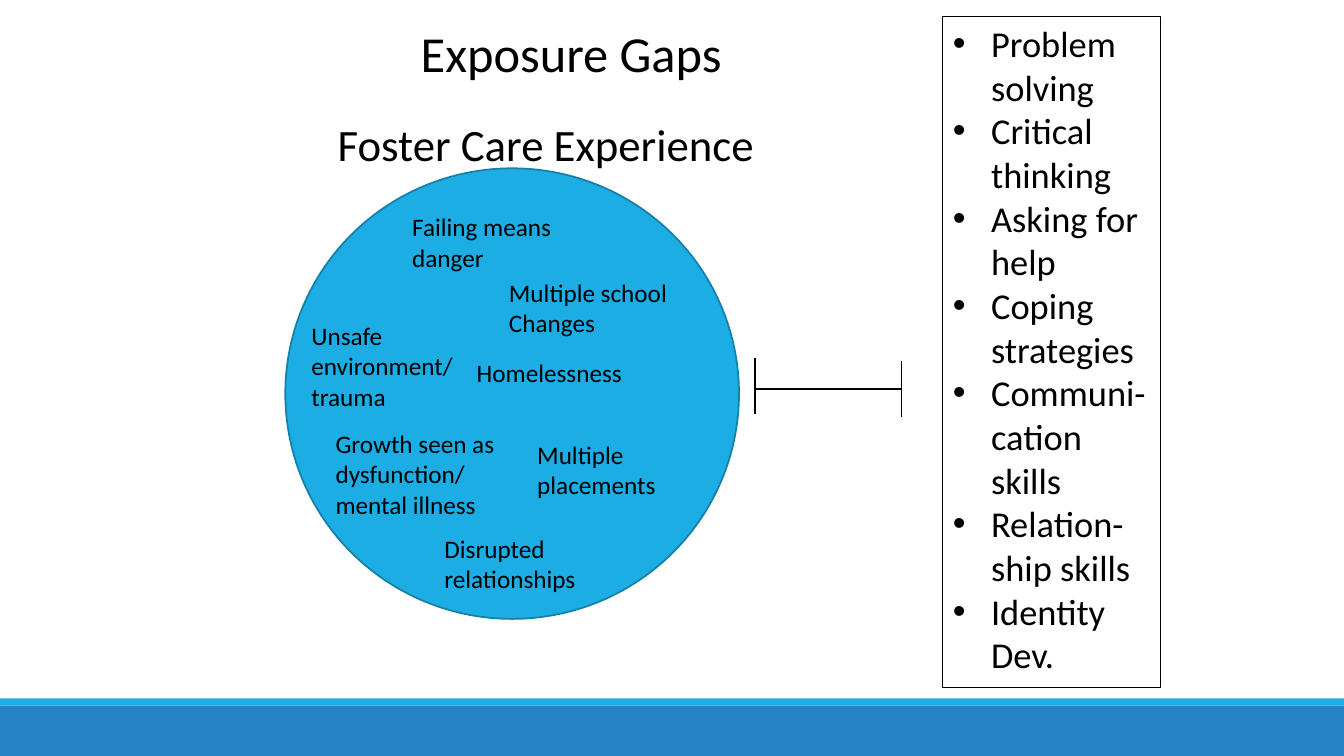
from pptx import Presentation
from pptx import util as u
from pptx.dml.color import RGBColor
from pptx.enum import shapes, text
from pptx.oxml.ns import qn
from lxml import etree

COLORS = {"black": "000000", "sky": "1CADE4", "blue": "2683C6", "rim": "1580A9"}

EXPERIENCES = [
    (3.99, 2.05, 2, 0.71, ["Failing means danger"]),
    (4.95, 2.7, 2, 0.71, ["Multiple school Changes"]),
    (2.99, 3.13, 2, 1.01, ["Unsafe environment/", "trauma"]),
    (4.63, 3.5, 2, 0.4, ["Homelessness"]),
    (3.23, 4.2, 2, 1.01, ["Growth seen as dysfunction/", "mental illness"]),
    (5.23, 4.31, 1.75, 0.71, ["Multiple placements"]),
    (4.31, 5.24, 2, 0.71, ["Disrupted relationships"]),
]
SKILLS = ["Problem solving", "Critical thinking", "Asking for help",
          "Coping strategies", "Communi-cation skills",
          "Relation-ship skills", "Identity Dev."]


def color(name):
    return RGBColor.from_string(COLORS[name])


def write(shape, lines, size=18, align=text.PP_ALIGN.LEFT, bullet=False):
    frame = shape.text_frame
    frame.word_wrap = True
    frame.auto_size = text.MSO_AUTO_SIZE.NONE
    frame.vertical_anchor = text.MSO_ANCHOR.TOP
    frame.text = "\n".join(lines)
    for paragraph in frame.paragraphs:
        paragraph.alignment = align
        paragraph.space_before = u.Pt(0)
        font = paragraph.runs[0].font
        font.name, font.size = "Calibri", u.Pt(size)
        font.color.rgb = color("black")
        if bullet:
            properties = paragraph._p.get_or_add_pPr()
            indent = u.Inches(0.38)
            properties.set("marL", str(indent))
            properties.set("indent", str(-indent))
            etree.SubElement(properties, qn("a:buFont")).set("typeface", "Arial")
            etree.SubElement(properties, qn("a:buChar")).set("char", "•")


def place(shape, left, top, width, height):
    shape.left, shape.top = u.Inches(left), u.Inches(top)
    shape.width, shape.height = u.Inches(width), u.Inches(height)


class SlideBuilder:
    def __init__(self, slide):
        self.slide = slide

    def title(self, words, box, size):
        place(self.slide.shapes.title, *box)
        write(self.slide.shapes.title, [words], size, text.PP_ALIGN.CENTER)

    def bullets(self, items, box, size):
        body = self.slide.placeholders[1]
        place(body, *box)
        body.line.color.rgb = color("black")
        body.line.width = u.Pt(0.75)
        write(body, items, size, bullet=True)

    def shape(self, kind, box, fill, line=None):
        shape = self.slide.shapes.add_shape(kind, *map(u.Inches, box))
        shape.shadow.inherit = False
        shape.fill.solid()
        shape.fill.fore_color.rgb = color(fill)
        if line:
            shape.line.color.rgb = color(line)
            shape.line.width = u.Pt(1.25)
        else:
            shape.line.fill.background()

    def label(self, lines, box, size=18):
        write(self.slide.shapes.add_textbox(*map(u.Inches, box)), lines, size)

    def line(self, *ends):
        line = self.slide.shapes.add_connector(
            shapes.MSO_CONNECTOR.STRAIGHT, *map(u.Inches, ends))
        line.line.color.rgb = color("black")
        line.line.width = u.Pt(1)
        etree.SubElement(line._element.spPr, qn("a:effectLst"))


def main():
    presentation = Presentation()
    presentation.slide_width = u.Inches(13.33)
    presentation.slide_height = u.Inches(7.5)
    layout = presentation.slide_layouts[1]
    builder = SlideBuilder(presentation.slides.add_slide(layout))

    rectangle = shapes.MSO_SHAPE.RECTANGLE
    builder.shape(rectangle, (0, 7, 13.33, 0.5), "blue")
    builder.shape(rectangle, (0, 6.93, 13.33, 0.07), "sky")
    builder.title("Exposure Gaps", (2.25, 0.17, 6.83, 0.71), 36)

    builder.shape(shapes.MSO_SHAPE.OVAL, (2.83, 1.67, 4.5, 4.47), "sky", "rim")
    builder.label(["Foster Care Experience"], (3.25, 1.11, 4.5, 0.64), 32)
    for *box, lines in EXPERIENCES:
        builder.label(lines, box)

    gap_left, gap_right = 7.49, 8.94
    builder.line(gap_left, 3.86, gap_right, 3.86)
    for x, top in ((gap_left, 3.55), (gap_right, 3.58)):
        builder.line(x, top, x, top + 0.56)

    builder.bullets(SKILLS, (9.35, 0.16, 2.16, 6.66), 26)
    presentation.save("out.pptx")


if __name__ == "__main__":
    main()
